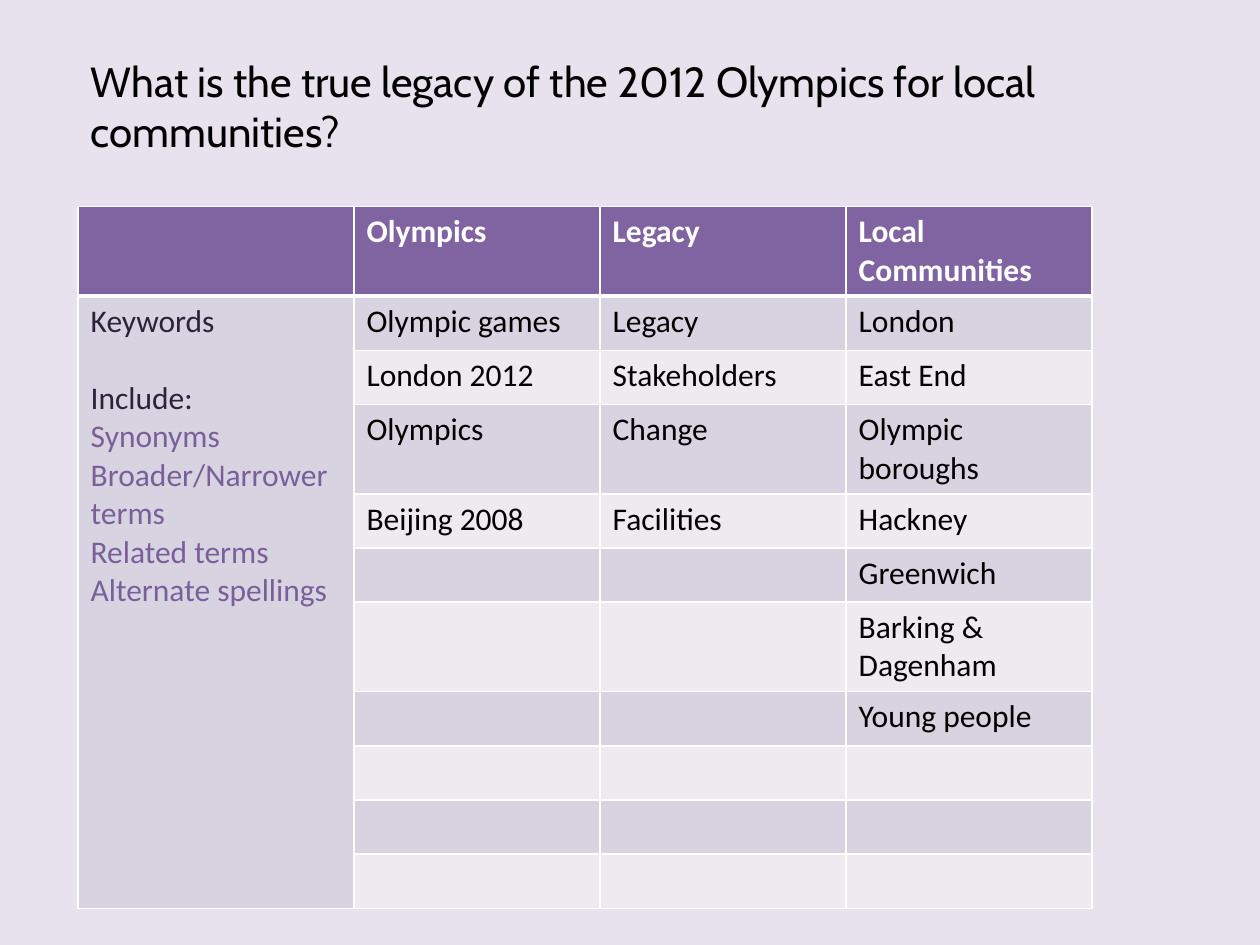
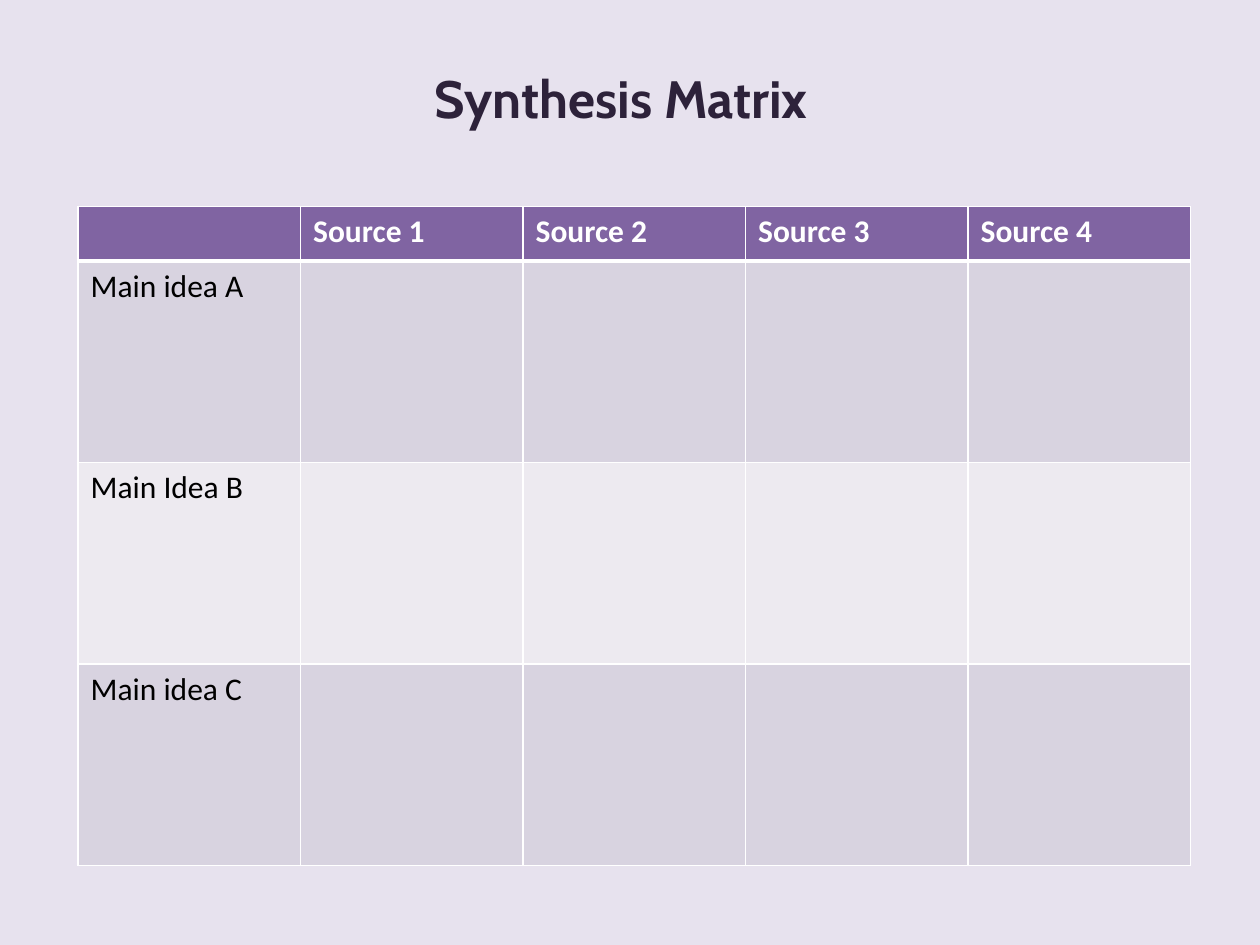
import pptx
import pptx.dml.color
import pptx.enum.text
import pptx.oxml
import pptx.oxml.ns
import pptx.util

COLORS = {
    "background": "E7E2EE",
    "header": "8064A2",
    "band_dark": "D8D3E0",
    "band_light": "EDEAF0",
    "border": "FFFFFF",
    "white": "FFFFFF",
    "black": "000000",
    "ink": "2D223A",
    "accent": "7A5F9B",
}
TITLE_FONT, TABLE_FONT = "Cabin", "Calibri"
TITLE_ONLY_LAYOUT = 5
GRID_COLUMNS, GRID_ROWS = 100, 75
TABLE_LEFT, TABLE_TOP = 6.2, 16.4
ROW_HEIGHT, TALL_ROW_HEIGHT, IDEA_HEIGHT = 4.3, 7.1, 16
LINE_GAP = 22


def rgb(name):
    return pptx.dml.color.RGBColor.from_string(COLORS[name])


def write(paragraph, text, font=TABLE_FONT, size=18, color="black", bold=False,
          align=pptx.enum.text.PP_ALIGN.LEFT, space_before=0):
    paragraph.alignment = align
    paragraph.space_before = pptx.util.Pt(space_before)
    run = paragraph.add_run()
    run.text = text
    run.font.name = font
    run.font.size = pptx.util.Pt(size)
    run.font.bold = bold
    run.font.color.rgb = rgb(color)


class Deck:
    def __init__(self):
        self.presentation = pptx.Presentation()
        self.presentation.slide_width = pptx.util.Inches(10)
        self.presentation.slide_height = pptx.util.Inches(7.5)
        fill = self.presentation.slide_master.background.fill
        fill.solid()
        fill.fore_color.rgb = rgb("background")
        self.slide = None

    def x(self, columns):
        return round(self.presentation.slide_width * columns / GRID_COLUMNS)

    def y(self, rows):
        return round(self.presentation.slide_height * rows / GRID_ROWS)

    def add_slide(self):
        layout = self.presentation.slide_layouts[TITLE_ONLY_LAYOUT]
        self.slide = self.presentation.slides.add_slide(layout)

    def title(self, text, left, top, width, height, wrap=True, **style):
        shape = self.slide.shapes.title
        shape.left, shape.top = self.x(left), self.y(top)
        shape.width, shape.height = self.x(width), self.y(height)
        frame = shape.text_frame
        frame.word_wrap = wrap
        frame.auto_size = pptx.enum.text.MSO_AUTO_SIZE.SHAPE_TO_FIT_TEXT
        frame.vertical_anchor = pptx.enum.text.MSO_ANCHOR.TOP
        write(frame.paragraphs[0], text, font=TITLE_FONT, **style)

    def borders(self, cell, **widths):
        properties = cell._tc.get_or_add_tcPr()
        for index, side in enumerate("LRTB"):
            width = pptx.util.Pt(widths.get(side, 1))
            line = pptx.oxml.parse_xml(
                f'<a:ln{side} {pptx.oxml.ns.nsdecls("a")} w="{width}"><a:solidFill>'
                f'<a:srgbClr val="{COLORS["border"]}"/></a:solidFill></a:ln{side}>')
            properties.insert(index, line)

    def table(self, rows, widths, heights):
        frame = self.slide.shapes.add_table(
            len(rows), len(widths), self.x(TABLE_LEFT), self.y(TABLE_TOP),
            self.x(sum(widths)), self.y(sum(heights)))
        table = frame.table
        table.first_row = table.horz_banding = False
        for column, width in zip(table.columns, widths):
            column.width = self.x(width)
        for row, height in zip(table.rows, heights):
            row.height = self.y(height)
        for row_index, texts in enumerate(rows):
            is_header = row_index == 0
            band = "band_dark" if row_index % 2 else "band_light"
            for column_index, text in enumerate(texts):
                cell = table.cell(row_index, column_index)
                cell.fill.solid()
                cell.fill.fore_color.rgb = rgb("header" if is_header else band)
                self.borders(cell, T=3 if row_index == 1 else 1, B=3 if is_header else 1)
                if text:
                    write(cell.text_frame.paragraphs[0], text, bold=is_header,
                          color="white" if is_header else "black")
        return table


def keyword_slide(deck):
    deck.add_slide()
    columns = {
        "Olympics": ["Olympic games", "London 2012", "Olympics", "Beijing 2008"],
        "Legacy": ["Legacy", "Stakeholders", "Change", "Facilities"],
        "Local Communities": ["London", "East End", "Olympic boroughs", "Hackney",
                              "Greenwich", "Barking & Dagenham", "Young people"],
    }
    keyword_rows = 10
    padded = [words + [""] * (keyword_rows - len(words)) for words in columns.values()]
    rows = [["", *columns]] + [["", *words] for words in zip(*padded)]
    tall_rows = {0, 3, 6}
    heights = [TALL_ROW_HEIGHT if index in tall_rows else ROW_HEIGHT
               for index in range(len(rows))]
    table = deck.table(rows, [21.9] + [19.53] * len(columns), heights)

    guide = table.cell(1, 0)
    guide.merge(table.cell(keyword_rows, 0))
    frame = guide.text_frame
    write(frame.paragraphs[0], "Keywords", color="ink")
    write(frame.add_paragraph(), "Include:", color="ink", space_before=LINE_GAP)
    for hint in ("Synonyms", "Broader/Narrower terms", "Related terms",
                 "Alternate spellings"):
        write(frame.add_paragraph(), hint, color="accent")

    deck.title("What is the true legacy of the 2012 Olympics for local communities?",
               TABLE_LEFT, 3.9, 80.5, 9.1, size=24)


def matrix_slide(deck):
    deck.add_slide()
    deck.title("Synthesis Matrix", 30.7, 4.7, 37.2, 6.1, wrap=False, size=30,
               color="ink", bold=True, align=pptx.enum.text.PP_ALIGN.CENTER)
    sources = [f"Source {number}" for number in range(1, 5)]
    ideas = ["Main idea A", "Main Idea B", "Main idea C"]
    rows = [["", *sources]] + [[idea] + [""] * len(sources) for idea in ideas]
    deck.table(rows, [17.66] * len(rows[0]), [ROW_HEIGHT] + [IDEA_HEIGHT] * len(ideas))


def main():
    deck = Deck()
    keyword_slide(deck)
    matrix_slide(deck)
    deck.presentation.save("out.pptx")


if __name__ == "__main__":
    main()
